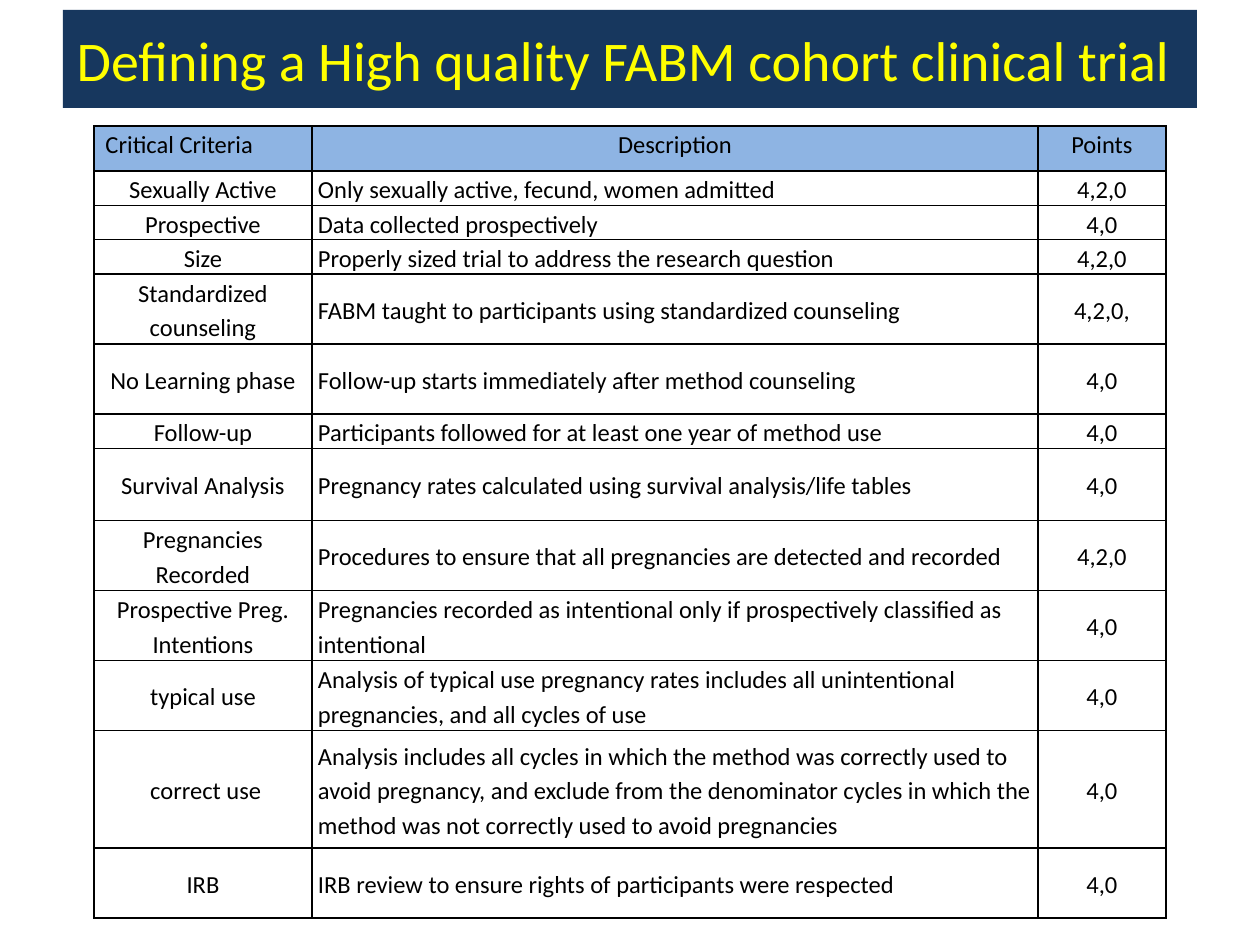
from dataclasses import dataclass

from lxml.etree import SubElement
from pptx import Presentation
from pptx.dml.color import RGBColor as Rgb
from pptx.enum.shapes import MSO_SHAPE as Shape
from pptx.enum.text import MSO_ANCHOR as Anchor, PP_ALIGN as Align
from pptx.oxml.ns import qn
from pptx.util import Pt

SCALE = 914400 / 126  # EMU per px


@dataclass(frozen=True)
class Theme:
    font: str = "Calibri"
    navy: str = "17375E"
    yellow: str = "FFFF00"
    blue: str = "8EB4E3"
    black: str = "000000"
    title: int = 32
    body: int = 14
    rule: int = 1


THEME = Theme()

COLS = (218, 726, 128)
ALIGNS = (Align.CENTER, Align.LEFT, Align.CENTER)
HEAD = (" Critical Criteria", "Description", "Points")
HEAD_H = 45

# Row height in px, criterion, description, points
ROWS = (
    (34, "Sexually Active", "Only sexually active, fecund, women admitted", "4,2,0"),
    (34, "Prospective", "Data collected prospectively", "4,0"),
    (34, "Size", "Properly sized trial to address the research question", "4,2,0"),
    (70, "Standardized counseling",
     "FABM taught to participants using standardized counseling", "4,2,0,"),
    (70, "No Learning phase",
     "Follow-up starts immediately after method counseling", "4,0"),
    (34, "Follow-up",
     "Participants followed for at least one year of method use", "4,0"),
    (72, "Survival Analysis",
     "Pregnancy rates calculated using survival analysis/life tables", "4,0"),
    (70, "Pregnancies Recorded",
     "Procedures to ensure that all pregnancies are detected and recorded", "4,2,0"),
    (70, "Prospective Preg. Intentions",
     "Pregnancies recorded as intentional only if prospectively classified "
     "as intentional", "4,0"),
    (70, "typical use",
     "Analysis of typical use pregnancy rates includes all unintentional "
     "pregnancies, and all cycles of use", "4,0"),
    (118, " correct use",
     "Analysis includes all cycles in which the method was correctly used to "
     "avoid pregnancy, and exclude from the denominator cycles in which the "
     "method was not correctly used to avoid pregnancies", "4,0"),
    (70, "IRB", "IRB review to ensure rights of participants were respected", "4,0"),
)


def px(num):
    return round(num * SCALE)


def set_text(frame, text, size, color, align):
    frame.text = text
    frame.word_wrap = True
    para = frame.paragraphs[0]
    para.alignment = align
    for run in para.runs:
        font = run.font
        font.name, font.size, font.bold = THEME.font, Pt(size), False
        font.color.rgb = Rgb.from_string(color)
    return para


def add_title(slide, text, left, top, width, height):
    box = slide.shapes.add_shape(
        Shape.RECTANGLE, px(left), px(top), px(width), px(height))
    box.shadow.inherit = False
    box.fill.solid()
    box.fill.fore_color.rgb = Rgb.from_string(THEME.navy)
    box.line.fill.background()
    box.text_frame.vertical_anchor = Anchor.MIDDLE
    set_text(box.text_frame, text, THEME.title, THEME.yellow, Align.CENTER)


def add_rules(cell):
    props = cell._tc.get_or_add_tcPr()
    for side in ("lnL", "lnR", "lnT", "lnB"):
        line = SubElement(props, qn("a:" + side), w=str(Pt(THEME.rule)))
        fill = SubElement(line, qn("a:solidFill"))
        SubElement(fill, qn("a:srgbClr"), val=THEME.black)


def set_cell(cell, text, align, anchor, fill=None):
    cell.margin_left = cell.margin_right = px(6)
    cell.margin_top = cell.margin_bottom = 0
    cell.vertical_anchor = anchor
    para = set_text(cell.text_frame, text, THEME.body, THEME.black, align)
    para.line_spacing = 1.15
    add_rules(cell)
    if fill:
        cell.fill.solid()
        cell.fill.fore_color.rgb = Rgb.from_string(fill)
    else:
        cell.fill.background()


def add_grid(slide, left, top):
    highs = [HEAD_H] + [row[0] for row in ROWS]
    table = slide.shapes.add_table(
        len(highs), len(COLS), px(left), px(top),
        px(sum(COLS)), px(sum(highs))).table
    table.horz_banding = False
    for col, width in zip(table.columns, COLS):
        col.width = px(width)
    for row, high in zip(table.rows, highs):
        row.height = px(high)

    # Header row
    for col, text in enumerate(HEAD):
        align = Align.CENTER if col else Align.LEFT
        set_cell(table.cell(0, col), text, align, Anchor.TOP, THEME.blue)

    # Criteria rows
    for num, (_, *texts) in enumerate(ROWS, 1):
        for col, (text, align) in enumerate(zip(texts, ALIGNS)):
            set_cell(table.cell(num, col), text, align, Anchor.MIDDLE)


def main():
    deck = Presentation()
    deck.slide_width, deck.slide_height = px(1260), px(945)
    slide = deck.slides.add_slide(deck.slide_layouts[6])
    add_title(slide, "Defining a High quality FABM cohort clinical trial ",
              63, 10, 1134, 98)
    add_grid(slide, 94, 126)
    deck.save("out.pptx")


if __name__ == "__main__":
    main()
